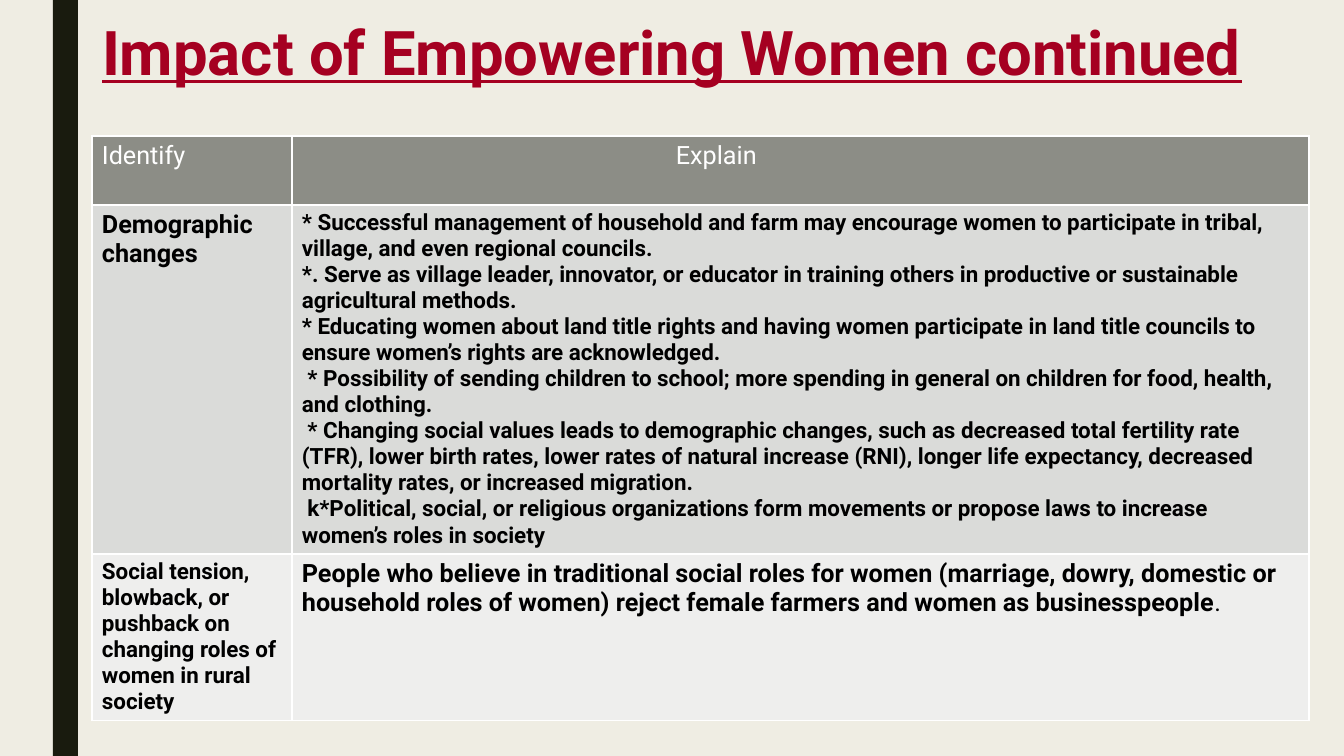
from lxml.etree import SubElement
from pptx import Presentation
from pptx.dml.color import RGBColor
from pptx.enum.shapes import MSO_SHAPE
from pptx.enum.text import MSO_ANCHOR, MSO_AUTO_SIZE, PP_ALIGN
from pptx.oxml.ns import qn
from pptx.util import Pt

PX = 914400 / 100.8
THEME = {
    "font": "Roboto",
    "page": "EFEDE3", "bar": "191B0E", "title": "A50021",
    "head_text": "FFFFFF", "body_text": "000000", "rule": "FFFFFF",
    "row_fills": ["8C8D86", "DADBD9", "EEEEED"],
    "title_size": 44, "large": 18, "small": 16, "rule_width": 1,
}


def px(length):
    return round(length * PX)


def add_span(para, text, size, color, bold=False, underline=False):
    span = para.add_run()
    span.text = text
    font = span.font
    font.name, font.size = THEME["font"], Pt(size)
    font.bold, font.underline = bold, underline
    font.color.rgb = RGBColor.from_string(color)


deck = Presentation()
deck.slide_width, deck.slide_height = px(1344), px(756)
page = deck.slides.add_slide(deck.slide_layouts[5])
page.background.fill.solid()
page.background.fill.fore_color.rgb = RGBColor.from_string(THEME["page"])

# Side bar
bar = page.shapes.add_shape(MSO_SHAPE.RECTANGLE, px(53), 0, px(25), px(756))
bar.shadow.inherit = False
bar.fill.solid()
bar.fill.fore_color.rgb = RGBColor.from_string(THEME["bar"])
bar.line.fill.background()

# Title
title = page.shapes.title
title.left, title.top, title.width, title.height = px(92), px(18), px(1218), px(92)
frame = title.text_frame
frame.word_wrap = True
frame.auto_size = MSO_AUTO_SIZE.NONE
frame.vertical_anchor = MSO_ANCHOR.TOP
para = frame.paragraphs[0]
para.alignment = PP_ALIGN.LEFT
para.line_spacing = 0.89
add_span(para, "Impact of Empowering Women continued", THEME["title_size"],
         THEME["title"], bold=True, underline=True)

# Table content: each cell is a text size and its paragraphs
LARGE, SMALL = THEME["large"], THEME["small"]
rows = [
    [(LARGE, ["Identify"]), (LARGE, ["Explain"])],
    [(LARGE, ["Demographic changes"]),
     (SMALL, [
         "* Successful management of household and farm may encourage women to "
         "participate in tribal, village, and even regional councils.",
         "*. Serve as village leader, innovator, or educator in training others in "
         "productive or sustainable agricultural methods.",
         "* Educating women about land title rights and having women participate in "
         "land title councils to ensure women’s rights are acknowledged.",
         " * Possibility of sending children to school; more spending in general on "
         "children for food, health, and clothing.",
         " * Changing social values leads to demographic changes, such as decreased "
         "total fertility rate (TFR), lower birth rates, lower rates of natural "
         "increase (RNI), longer life expectancy, decreased mortality rates, or "
         "increased migration.",
         " k*Political, social, or religious organizations form movements or propose "
         "laws to increase women’s roles in society",
     ])],
    [(SMALL, ["Social tension, blowback, or pushback on changing roles of women "
              "in rural society"]),
     (LARGE, ["People who believe in traditional social roles for women (marriage, "
              "dowry, domestic or household roles of women) reject female farmers "
              "and women as businesspeople"])],
]
column_widths = [200, 1017]
row_heights = [69, 349, 166]

# Table
table = page.shapes.add_table(len(rows), len(column_widths), px(92), px(136),
                              px(sum(column_widths)), px(sum(row_heights))).table
for column, width in zip(table.columns, column_widths):
    column.width = px(width)
for row, height in zip(table.rows, row_heights):
    row.height = px(height)

for r, row in enumerate(rows):
    color = THEME["body_text"] if r else THEME["head_text"]
    for c, (size, texts) in enumerate(row):
        cell = table.cell(r, c)
        cell.margin_left = cell.margin_right = px(10)
        cell.margin_top = cell.margin_bottom = px(5)
        frame = cell.text_frame
        for i, text in enumerate(texts):
            para = frame.add_paragraph() if i else frame.paragraphs[0]
            add_span(para, text, size, color, bold=r > 0)
        # Cell borders come before the fill
        properties = cell._tc.get_or_add_tcPr()
        for side in ("a:lnL", "a:lnR", "a:lnT", "a:lnB"):
            line = SubElement(properties, qn(side), w=str(Pt(THEME["rule_width"])))
            solid = SubElement(line, qn("a:solidFill"))
            SubElement(solid, qn("a:srgbClr"), val=THEME["rule"])
        cell.fill.solid()
        cell.fill.fore_color.rgb = RGBColor.from_string(THEME["row_fills"][r])

# The second heading is set in; the closing stop is not bold
table.cell(0, 1).margin_left = px(384)
closing = table.cell(2, 1).text_frame.paragraphs[0]
add_span(closing, ".", LARGE, THEME["body_text"])

deck.save("out.pptx")
